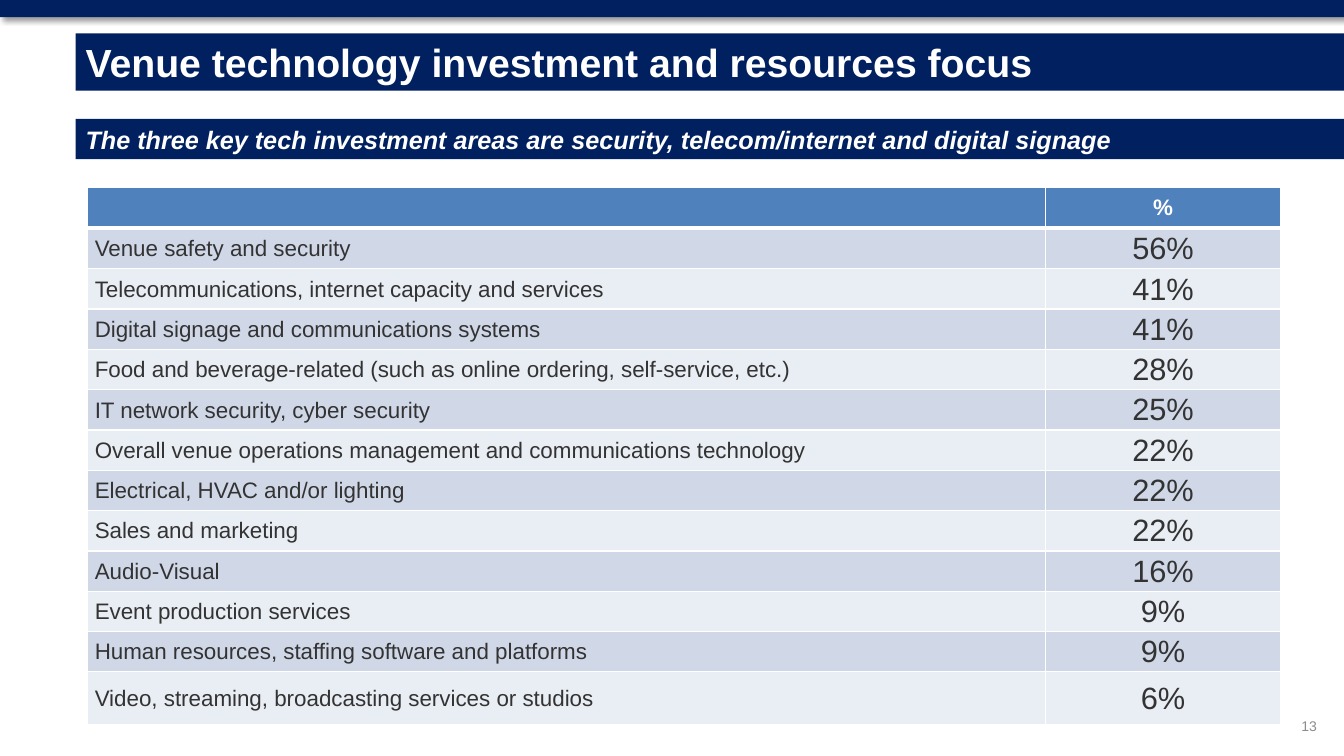
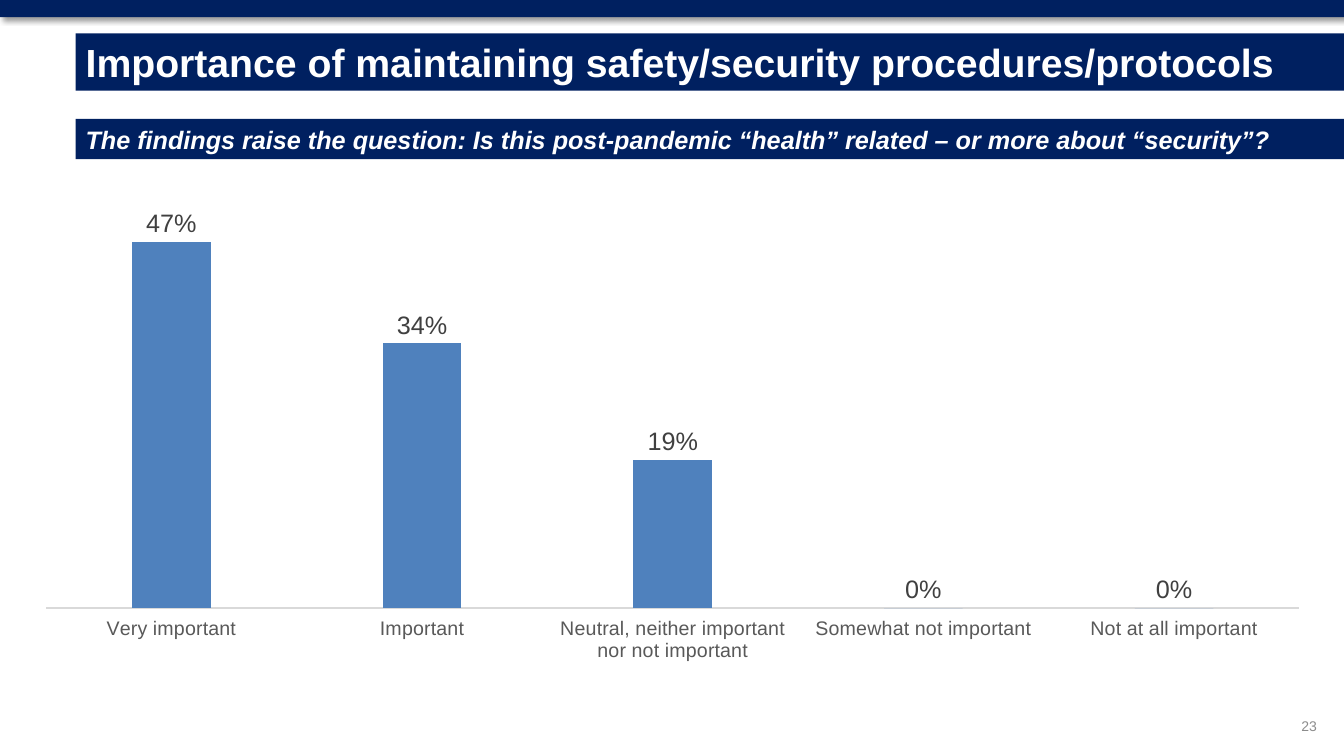
from lxml import etree
from pptx import Presentation
from pptx.chart.data import CategoryChartData
from pptx.dml.color import RGBColor
from pptx.enum.chart import XL_CHART_TYPE, XL_LABEL_POSITION, XL_TICK_LABEL_POSITION, XL_TICK_MARK
from pptx.enum.shapes import MSO_SHAPE
from pptx.enum.text import MSO_ANCHOR, MSO_AUTO_SIZE, PP_ALIGN
from pptx.oxml import parse_xml
from pptx.oxml.ns import nsdecls, qn
from pptx.util import Inches, Pt

LEFT, CENTER, RIGHT = PP_ALIGN.LEFT, PP_ALIGN.CENTER, PP_ALIGN.RIGHT
MIDDLE = MSO_ANCHOR.MIDDLE
NO_AUTOFIT = MSO_AUTO_SIZE.NONE
RECTANGLE = MSO_SHAPE.RECTANGLE
COLUMNS = XL_CHART_TYPE.COLUMN_CLUSTERED
OUTSIDE_END = XL_LABEL_POSITION.OUTSIDE_END
LABELS_LOW = XL_TICK_LABEL_POSITION.LOW
NO_TICK = XL_TICK_MARK.NONE

FONT = "Arial"
NAVY, BLUE, WHITE = "002060", "4F81BD", "FFFFFF"
STRIPES = ("D0D8E8", "E9EDF4")
TABLE_TEXT, PAGE_NUMBER = "333333", "8C8C8C"
AXIS_TEXT, AXIS_LINE, LABEL_TEXT = "595959", "D9D9D9", "404040"
PAGE_WIDTH, PAGE_HEIGHT = 13.33, 7.5
BAND_LEFT = 0.75

INVESTMENT = {
    "title": "Venue technology investment and resources focus",
    "subtitle": "The three key tech investment areas are security, telecom/internet and digital signage",
    "number": 13,
    "rows": [
        ("Venue safety and security", 56),
        ("Telecommunications, internet capacity and services", 41),
        ("Digital signage and communications systems", 41),
        ("Food and beverage-related (such as online ordering, self-service, etc.)", 28),
        ("IT network security, cyber security", 25),
        ("Overall venue operations management and communications technology", 22),
        ("Electrical, HVAC and/or lighting", 22),
        ("Sales and marketing", 22),
        ("Audio-Visual", 16),
        ("Event production services", 9),
        ("Human resources, staffing software and platforms", 9),
        ("Video, streaming, broadcasting services or studios", 6),
    ],
}
IMPORTANCE = {
    "title": "Importance of maintaining safety/security procedures/protocols",
    "subtitle": "The findings raise the question: Is this post-pandemic “health” related"
                " – or more about “security”?",
    "number": 23,
    "answers": {
        "Very important": 0.47,
        "Important": 0.34,
        "Neutral, neither important nor not important": 0.19,
        "Somewhat not important": 0,
        "Not at all important": 0,
    },
}


def color(value):
    return RGBColor.from_string(value)


def inches(*lengths):
    return [Inches(length) for length in lengths]


def paint(target, value):
    target.fill.solid()
    target.fill.fore_color.rgb = color(value)


def style_font(font, size, value, bold=False, italic=False):
    font.name, font.size, font.color.rgb = FONT, Pt(size), color(value)
    font.bold, font.italic = bold, italic


def write(frame, text, size, value, align=LEFT, **style):
    para = frame.paragraphs[0]
    para.alignment = align
    span = para.add_run()
    span.text = text
    style_font(span.font, size, value, **style)


def set_up_frame(frame):
    frame.word_wrap = True
    frame.auto_size = NO_AUTOFIT
    frame.vertical_anchor = MIDDLE


def add_band(slide, left, top, height):
    band = slide.shapes.add_shape(RECTANGLE, *inches(left, top, PAGE_WIDTH - left, height))
    band.shadow.inherit = False
    paint(band, NAVY)
    band.line.fill.background()
    return band


def add_top_band(slide):
    band = add_band(slide, 0, 0, 0.17)
    effects = band.element.spPr.find(qn("a:effectLst"))
    effects.append(parse_xml(
        f'<a:outerShdw {nsdecls("a")} blurRad="{Pt(4)}" dist="{Pt(3)}" dir="2700000" '
        'algn="tl" rotWithShape="0"><a:srgbClr val="000000"><a:alpha val="40000"/>'
        '</a:srgbClr></a:outerShdw>'))


def add_page(deck, content):
    """Add a slide with its top band, title, subtitle and page number."""
    slide = deck.slides.add_slide(deck.slide_layouts.get_by_name("Title Only"))
    add_top_band(slide)

    title = slide.shapes.title
    title.left, title.top, title.width, title.height = inches(
        BAND_LEFT, 0.33, PAGE_WIDTH - BAND_LEFT, 0.57)
    paint(title, NAVY)
    set_up_frame(title.text_frame)
    write(title.text_frame, content["title"], 28, WHITE, bold=True)

    subtitle = add_band(slide, BAND_LEFT, 1.18, 0.4)
    set_up_frame(subtitle.text_frame)
    write(subtitle.text_frame, content["subtitle"], 18, WHITE, bold=True, italic=True)

    number = slide.shapes.add_textbox(*inches(10.83, 7, 2.33, 0.4))
    set_up_frame(number.text_frame)
    write(number.text_frame, str(content["number"]), 10, PAGE_NUMBER, RIGHT)
    return slide


def format_cell(cell, fill, bottom_width=1):
    properties = cell._tc.get_or_add_tcPr()
    for side, width in (("L", 1), ("R", 1), ("T", 1), ("B", bottom_width)):
        line = etree.SubElement(properties, qn(f"a:ln{side}"), w=str(Pt(width)))
        solid = etree.SubElement(line, qn("a:solidFill"))
        etree.SubElement(solid, qn("a:srgbClr"), val=WHITE)
    paint(cell, fill)
    cell.vertical_anchor = MIDDLE


def add_investment_table(slide, rows):
    widths = (9.5, 2.33)
    heights = [0.39] + [0.4] * (len(rows) - 1) + [0.52]
    table = slide.shapes.add_table(
        len(heights), len(widths), *inches(0.87, 1.86, sum(widths), sum(heights))).table
    for column, width in zip(table.columns, widths):
        column.width = Inches(width)
    for row, height in zip(table.rows, heights):
        row.height = Inches(height)

    for cell in table.rows[0].cells:
        format_cell(cell, BLUE, bottom_width=3)
    write(table.cell(0, 1).text_frame, "%", 16, WHITE, CENTER, bold=True)

    for index, (area, percent) in enumerate(rows):
        area_cell, percent_cell = table.rows[index + 1].cells
        for cell, indent in ((area_cell, 0.07), (percent_cell, 0.01)):
            format_cell(cell, STRIPES[index % 2])
            cell.margin_left, cell.margin_top, cell.margin_right, cell.margin_bottom = inches(
                indent, 0.01, 0.01, 0)
        write(area_cell.text_frame, area, 16, TABLE_TEXT)
        write(percent_cell.text_frame, f"{percent}%", 22, TABLE_TEXT, CENTER)


def place_plot(chart, **fractions):
    """Fix the inner plot area as fractions of the chart's size."""
    plot_area = chart.element.find(".//" + qn("c:plotArea"))
    for layout in plot_area.findall(qn("c:layout")):
        plot_area.remove(layout)
    layout = etree.Element(qn("c:layout"))
    manual = etree.SubElement(layout, qn("c:manualLayout"))
    settings = {"layoutTarget": "inner", "xMode": "edge", "yMode": "edge", **fractions}
    for name, value in settings.items():
        etree.SubElement(manual, qn(f"c:{name}"), val=str(value))
    plot_area.insert(0, layout)


def add_importance_chart(slide, answers):
    data = CategoryChartData(number_format="0%")
    data.categories = list(answers)
    data.add_series("Series 1", list(answers.values()))
    chart = slide.shapes.add_chart(COLUMNS, *inches(0.33, 2, 12.75, 4.83), data).chart
    chart.has_legend = chart.has_title = False
    style_font(chart.font, 14, AXIS_TEXT)
    place_plot(chart, x=0.01, y=0.035, w=0.975, h=0.8)

    plot = chart.plots[0]
    plot.gap_width, plot.overlap, plot.vary_by_categories = 219, -27, False
    series = plot.series[0]
    paint(series.format, BLUE)
    series.invert_if_negative = False
    labels = series.data_labels
    labels.show_value = True
    labels.number_format, labels.number_format_is_linked = "0%", False
    labels.position = OUTSIDE_END
    style_font(labels.font, 18, LABEL_TEXT)

    categories = chart.category_axis
    categories.major_tick_mark = categories.minor_tick_mark = NO_TICK
    categories.tick_label_position = LABELS_LOW
    categories.format.line.color.rgb = color(AXIS_LINE)
    categories.format.line.width = Pt(0.75)
    style_font(categories.tick_labels.font, 14, AXIS_TEXT)

    values = chart.value_axis
    values.minimum_scale, values.maximum_scale = 0, 0.5
    values.has_major_gridlines = values.visible = False


def main():
    deck = Presentation()
    deck.slide_width, deck.slide_height = inches(PAGE_WIDTH, PAGE_HEIGHT)
    add_investment_table(add_page(deck, INVESTMENT), INVESTMENT["rows"])
    add_importance_chart(add_page(deck, IMPORTANCE), IMPORTANCE["answers"])
    deck.save("out.pptx")


if __name__ == "__main__":
    main()
